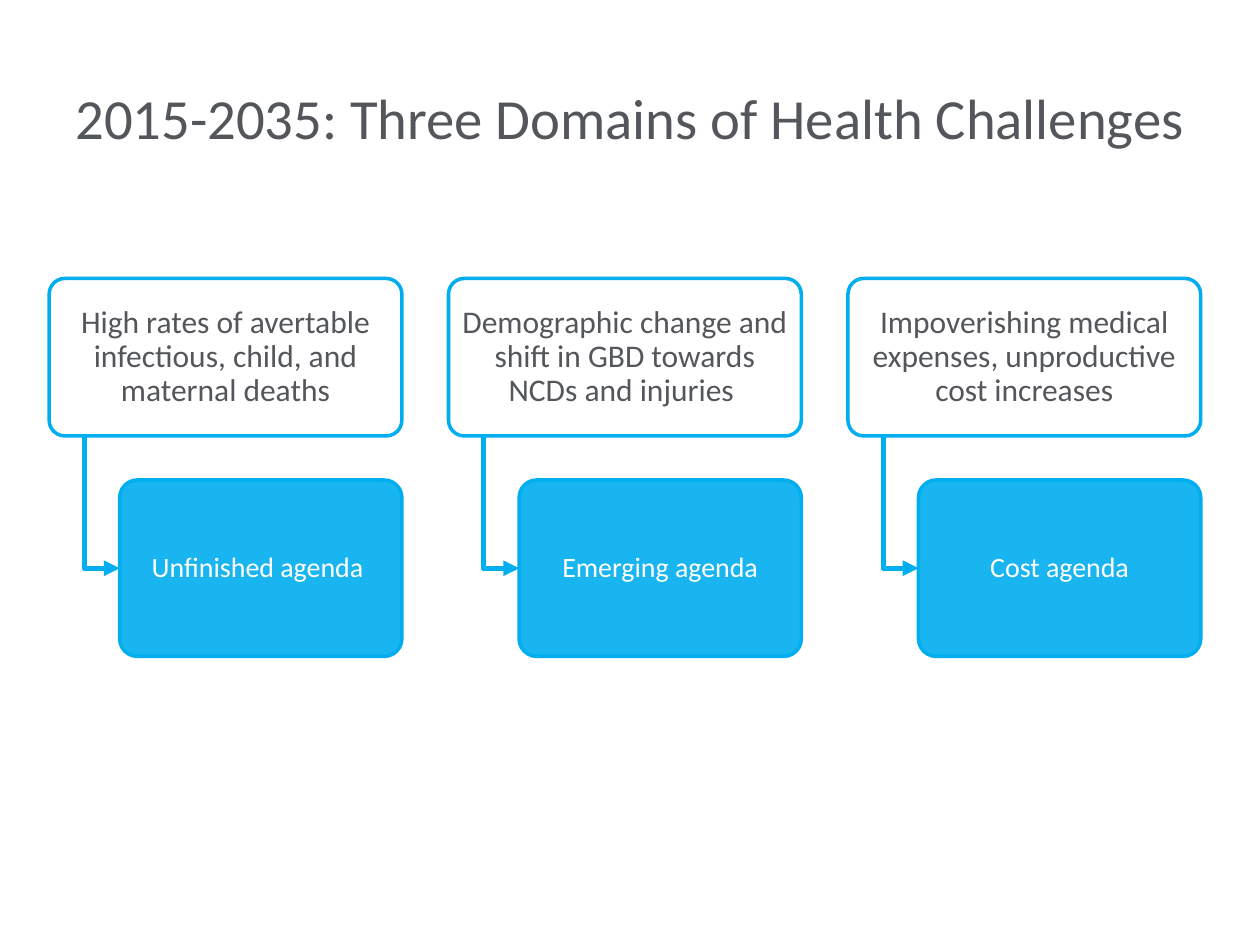
from dataclasses import dataclass

from pptx import Presentation
from pptx.dml.color import RGBColor
from pptx.enum.shapes import MSO_SHAPE
from pptx.enum.text import MSO_ANCHOR, PP_ALIGN
from pptx.oxml.ns import qn
from pptx.util import Inches, Pt
from lxml.etree import SubElement

COLORS = {"text": "53565A", "accent": "00AEEF", "white": "FFFFFF"}
FONT = "Calibri"

# Column grid, in inches
LEFT, STEP = 0.39, 3.17
TOP, WIDTH, HEIGHT = 2.21, 2.8, 1.25
INDENT = 0.28
AGENDA_TOP, AGENDA_HEIGHT = 3.81, 1.4


@dataclass
class Domain:
    challenge: str
    agenda: str


DOMAINS = [
    Domain("High rates of avertable infectious, child, and maternal deaths",
           "Unfinished agenda "),
    Domain("Demographic change and shift in GBD towards NCDs and injuries ",
           "Emerging agenda"),
    Domain("Impoverishing medical expenses, unproductive cost increases",
           "Cost agenda"),
]


def rgb(name: str) -> RGBColor:
    return RGBColor.from_string(COLORS[name])


def set_text(sp, text: str, size: float, color: str, spacing: float = 1.0) -> None:
    tf = sp.text_frame
    tf.word_wrap = True
    tf.vertical_anchor = MSO_ANCHOR.MIDDLE
    p = tf.paragraphs[0]
    p.text = text
    p.alignment = PP_ALIGN.CENTER
    p.line_spacing = spacing
    font = p.runs[0].font
    font.name, font.size = FONT, Pt(size)
    font.color.rgb = rgb(color)


def set_line(sp, width: float) -> None:
    sp.shadow.inherit = False
    sp.line.color.rgb = rgb("accent")
    sp.line.width = Pt(width)


def add_box(shapes, x: float, y: float, w: float, h: float, fill: str,
            text: str, size: float, color: str, inset: float):
    sp = shapes.add_shape(MSO_SHAPE.ROUNDED_RECTANGLE,
                          Inches(x), Inches(y), Inches(w), Inches(h))
    sp.adjustments[0] = 0.1
    sp.fill.solid()
    sp.fill.fore_color.rgb = rgb(fill)
    set_line(sp, 2)
    set_text(sp, text, size, color, 0.9)
    tf = sp.text_frame
    tf.margin_left = tf.margin_right = Inches(inset)
    tf.margin_top = tf.margin_bottom = Inches(inset - 0.01)
    return sp


def add_elbow(shapes, x: float, y: float, end_x: float, end_y: float) -> None:
    fb = shapes.build_freeform(Inches(x), Inches(y))
    fb.add_line_segments([(Inches(x), Inches(end_y)),
                          (Inches(end_x), Inches(end_y))], close=False)
    sp = fb.convert_to_shape()
    sp.fill.background()
    set_line(sp, 3)
    ln = sp._element.spPr.find(qn("a:ln"))
    SubElement(ln, qn("a:tailEnd"), type="triangle")


def add_domain(shapes, x: float, domain: Domain) -> None:
    add_box(shapes, x, TOP, WIDTH, HEIGHT, "white",
            domain.challenge, 18, "text", 0.04)
    agenda_x = x + 2 * INDENT
    add_elbow(shapes, x + INDENT, TOP + HEIGHT,
              agenda_x, AGENDA_TOP + AGENDA_HEIGHT / 2)
    sp = add_box(shapes, agenda_x, AGENDA_TOP, WIDTH - 2 * INDENT, AGENDA_HEIGHT,
                 "accent", domain.agenda, 16, "white", 0.03)
    # Slightly transparent fill
    color = sp._element.spPr.find(qn("a:solidFill")).find(qn("a:srgbClr"))
    SubElement(color, qn("a:alpha"), val="90000")


def main() -> None:
    prs = Presentation()
    prs.slide_width, prs.slide_height = Inches(10), Inches(7.5)
    s = prs.slides.add_slide(prs.slide_layouts[6])

    # Title
    title = s.shapes.add_textbox(Inches(0.5), Inches(0.3), Inches(9), Inches(1.25))
    set_text(title, "2015-2035: Three Domains of Health Challenges", 32.4, "text")

    # Challenge and agenda columns
    for i, domain in enumerate(DOMAINS):
        add_domain(s.shapes, LEFT + i * STEP, domain)

    prs.save("out.pptx")


if __name__ == "__main__":
    main()
